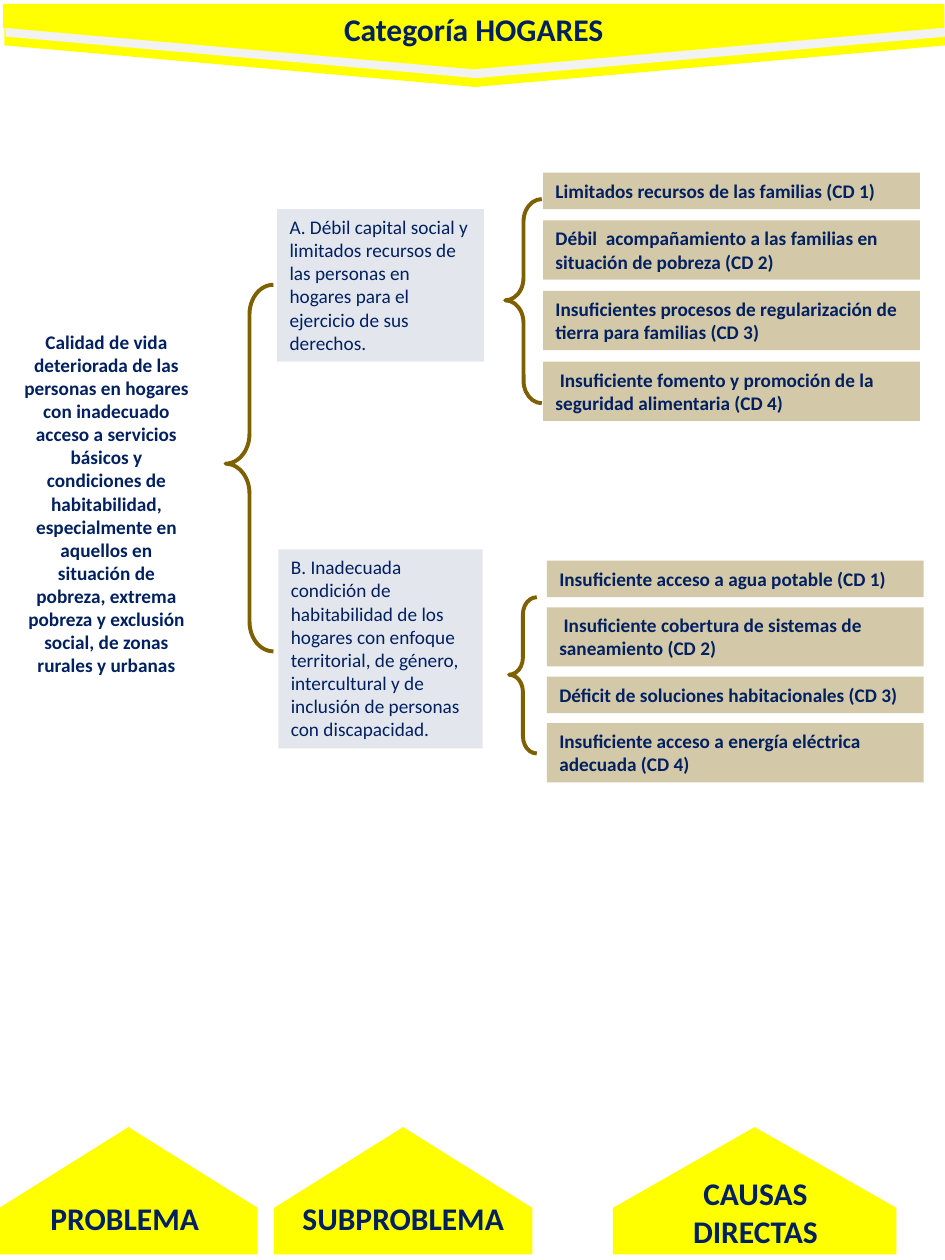
from lxml import etree
from pptx import Presentation
from pptx import util as u
from pptx.dml.color import RGBColor
from pptx.enum import shapes, text
from pptx.oxml.ns import qn

COLOURS = {"yellow": "FFFF00", "grey": "F2F2F2", "navy": "002060", "brown": "7F6000"}
FONT = "Calibri"
WIDTH, HEIGHT = 7.5, 10
LINE_HEIGHTS = {1: 0.29, 2: 0.47}  # box height by number of text lines

TITLE = "Categoría HOGARES"
PROBLEM = (
    "Calidad de vida deteriorada de las personas en hogares con inadecuado acceso "
    "a servicios básicos y condiciones de habitabilidad, especialmente en aquellos "
    "en situación de pobreza, extrema pobreza y exclusión social, de zonas rurales "
    "y urbanas"
)
GROUPS = [
    {
        "subproblem": "A. Débil capital social y limitados recursos de las personas en  "
                      "hogares para el ejercicio de sus derechos.",
        "box": (2.2, 1.66, 1.64, 1.21),
        "brace": (4.01, 1.58, 0.29, 1.62),
        "left": 4.31, "top": 1.37, "gap": 0.09,
        "causes": [
            ("Limitados recursos de las familias (CD 1)", 1),
            ("Débil  acompañamiento a las familias en situación de pobreza (CD 2)", 2),
            ("Insuficientes procesos de regularización de tierra para familias (CD 3)", 2),
            (" Insuficiente fomento y promoción de la seguridad alimentaria (CD 4)", 2),
        ],
    },
    {
        "subproblem": "B. Inadecuada condición de habitabilidad de los hogares con enfoque "
                      "territorial, de género, intercultural y de inclusión de personas "
                      "con discapacidad.",
        "box": (2.21, 4.36, 1.62, 1.58),
        "brace": (4.04, 4.74, 0.22, 1.24),
        "left": 4.34, "top": 4.45, "gap": 0.08,
        "causes": [
            ("Insuficiente acceso a agua potable (CD 1)", 1),
            (" Insuficiente cobertura de sistemas de saneamiento (CD 2)", 2),
            ("Déficit de soluciones habitacionales (CD 3)", 1),
            ("Insuficiente acceso a energía eléctrica adecuada (CD 4)", 2),
        ],
    },
]
# label, label box, arrow centre, arrow width
COLUMNS = [
    ("PROBLEMA", (0.14, 9.47, 1.7, 0.4), 1.02, 2.05),
    ("SUBPROBLEMA", (2.24, 9.47, 1.92, 0.4), 3.2, 2.05),
    ("CAUSAS DIRECTAS", (5.27, 9.27, 1.45, 0.71), 5.99, 2.25),
]
# band colour, centre x, centre y
BANDS = [("yellow", 3.77, 0.43), ("grey", 3.78, 0.36), ("yellow", 3.76, 0.29)]

deck = Presentation()
deck.slide_width, deck.slide_height = u.Inches(WIDTH), u.Inches(HEIGHT)
page = deck.slides.add_slide(deck.slide_layouts[5])


def inches(*lengths):
    return [u.Inches(length) for length in lengths]


def write(shape, words, size=11, bold=True, align=text.PP_ALIGN.LEFT):
    frame = shape.text_frame
    frame.word_wrap = True
    frame.auto_size = text.MSO_AUTO_SIZE.NONE
    frame.vertical_anchor = text.MSO_ANCHOR.TOP
    para = frame.paragraphs[0]
    para.alignment = align
    span = para.add_run()
    span.text = words
    span.font.name, span.font.size, span.font.bold = FONT, u.Pt(size), bold
    span.font.color.rgb = RGBColor.from_string(COLOURS["navy"])


def add_filled(kind, area, colour, opacity=100):
    shape = page.shapes.add_shape(kind, *inches(*area))
    shape.shadow.inherit = False
    shape.line.fill.background()
    shape.fill.solid()
    shape.fill.fore_color.rgb = RGBColor.from_string(COLOURS[colour])
    if opacity < 100:
        tint = shape.element.spPr.find(qn("a:solidFill"))[0]
        etree.SubElement(tint, qn("a:alpha"), val=str(opacity * 1000))
    return shape


def add_arrow(centre_x, centre_y, length, breadth, rotation, colour):
    """Add a solid pointed band, turned around its centre."""
    area = (centre_x - length / 2, centre_y - breadth / 2, length, breadth)
    arrow = add_filled(shapes.MSO_SHAPE.RIGHT_ARROW, area, colour)
    arrow.adjustments[0], arrow.adjustments[1] = 1, 0.635
    arrow.rotation = rotation


def add_brace(area, point):
    brace = page.shapes.add_shape(shapes.MSO_SHAPE.LEFT_BRACE, *inches(*area))
    brace.shadow.inherit = False
    brace.fill.background()
    brace.line.color.rgb = RGBColor.from_string(COLOURS["brown"])
    brace.line.width = u.Pt(2.25)
    brace.adjustments[0], brace.adjustments[1] = 0.619, point


for colour, x, y in BANDS:
    add_arrow(x, y, 0.52, 7.47, 90, colour)

title = page.shapes.title
title.left, title.top, title.width, title.height = inches(1.72, 0.03, 4.08, 0.4)
write(title, TITLE, size=18, align=text.PP_ALIGN.CENTER)
title.element.getparent().append(title.element)  # bring in front of the bands

problem = page.shapes.add_textbox(*inches(0.09, 2.57, 1.51, 2.88))
write(problem, PROBLEM, align=text.PP_ALIGN.CENTER)
add_brace((1.79, 2.26, 0.38, 2.91), 0.488)

for group in GROUPS:
    box = add_filled(shapes.MSO_SHAPE.RECTANGLE, group["box"], "navy", 11)
    write(box, group["subproblem"], bold=False)
    top = group["top"]
    for cause, lines in group["causes"]:
        height = LINE_HEIGHTS[lines]
        area = (group["left"], top, 2.99, height)
        write(add_filled(shapes.MSO_SHAPE.RECTANGLE, area, "brown", 34), cause)
        top += height + group["gap"]
    add_brace(group["brace"], 0.496)

for label, area, centre, breadth in COLUMNS:
    add_arrow(centre, 9.45, 1.01, breadth, 270, "yellow")
    write(page.shapes.add_textbox(*inches(*area)), label, size=18,
          align=text.PP_ALIGN.CENTER)

deck.save("out.pptx")
